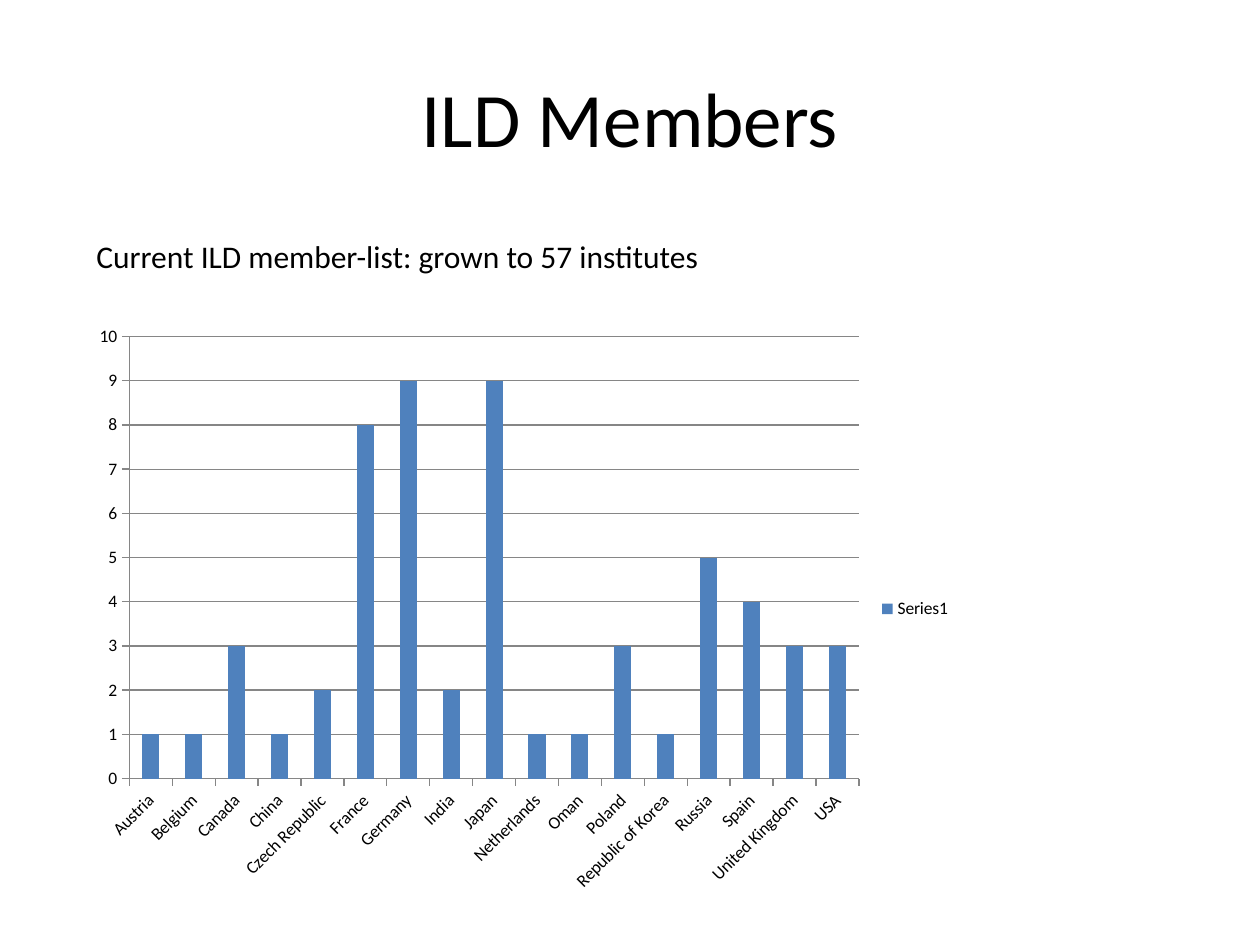
from pptx import Presentation
from pptx.chart.data import CategoryChartData
from pptx.dml.color import RGBColor
from pptx.enum.chart import XL_CHART_TYPE, XL_LEGEND_POSITION, XL_TICK_MARK
from pptx.enum.text import MSO_ANCHOR, MSO_AUTO_SIZE, PP_ALIGN
from pptx.util import Emu, Inches, Pt

PX_PER_INCH = 126
BLACK = RGBColor(0x00, 0x00, 0x00)
BLUE = RGBColor(0x4F, 0x81, 0xBD)
GREY = RGBColor(0x86, 0x86, 0x86)

MEMBERS = {
    "Austria": 1, "Belgium": 1, "Canada": 3, "China": 1, "Czech Republic": 2,
    "France": 8, "Germany": 9, "India": 2, "Japan": 9, "Netherlands": 1,
    "Oman": 1, "Poland": 3, "Republic of Korea": 1, "Russia": 5, "Spain": 4,
    "United Kingdom": 3, "USA": 3,
}


def px(n):
    return Emu(round(n * Inches(1) / PX_PER_INCH))


class SlideBuilder:
    """Holds the text style and the current slide."""

    def __init__(self, prs, font="Calibri", color=BLACK):
        self.font_name = font
        self.color = color
        self.slide = prs.slides.add_slide(prs.slide_layouts[5])

    def style(self, font, size):
        font.name = self.font_name
        font.size = Pt(size)
        font.color.rgb = self.color

    def add_run(self, p, text, size):
        r = p.add_run()
        r.text = text
        self.style(r.font, size)

    def title(self, text, x, y, w, h, size=44):
        sp = self.slide.shapes.title
        sp.left, sp.top, sp.width, sp.height = map(px, (x, y, w, h))
        tf = sp.text_frame
        tf.vertical_anchor = MSO_ANCHOR.MIDDLE
        p = tf.paragraphs[0]
        p.alignment = PP_ALIGN.CENTER
        self.add_run(p, text, size)

    def text(self, text, x, y, w, h, size=18):
        sp = self.slide.shapes.add_textbox(*map(px, (x, y, w, h)))
        tf = sp.text_frame
        tf.word_wrap = False
        tf.auto_size = MSO_AUTO_SIZE.SHAPE_TO_FIT_TEXT
        self.add_run(tf.paragraphs[0], text, size)

    def column_chart(self, values, name, x, y, w, h, size=10):
        data = CategoryChartData()
        data.categories = list(values)
        data.add_series(name, list(values.values()))
        frame = self.slide.shapes.add_chart(
            XL_CHART_TYPE.COLUMN_CLUSTERED, *map(px, (x, y, w, h)), data)
        chart = frame.chart
        chart.has_title = False
        self.style(chart.font, size)

        # Columns
        plot = chart.plots[0]
        plot.gap_width = 150
        plot.vary_by_categories = False
        fill = plot.series[0].format.fill
        fill.solid()
        fill.fore_color.rgb = BLUE

        # Axes and grid
        cat_axis, val_axis = chart.category_axis, chart.value_axis
        for axis in (cat_axis, val_axis):
            axis.major_tick_mark = XL_TICK_MARK.OUTSIDE
            axis.minor_tick_mark = XL_TICK_MARK.NONE
            axis.format.line.color.rgb = GREY
            self.style(axis.tick_labels.font, size)
        val_axis.minimum_scale, val_axis.maximum_scale = 0, 10
        val_axis.major_unit = 1
        val_axis.has_major_gridlines = True
        val_axis.major_gridlines.format.line.color.rgb = GREY

        # Legend
        chart.has_legend = True
        chart.legend.position = XL_LEGEND_POSITION.RIGHT
        chart.legend.include_in_layout = False
        self.style(chart.legend.font, size)


def main():
    prs = Presentation()
    prs.slide_width, prs.slide_height = Inches(10), Inches(7.5)

    s = SlideBuilder(prs)
    s.title("ILD Members", 63, 38, 1134, 158)
    s.text("Current ILD member-list: grown to 57 institutes", 84, 231, 636, 50)
    s.column_chart(MEMBERS, "Series1", 82, 315, 882, 588)

    prs.save("out.pptx")


if __name__ == "__main__":
    main()
